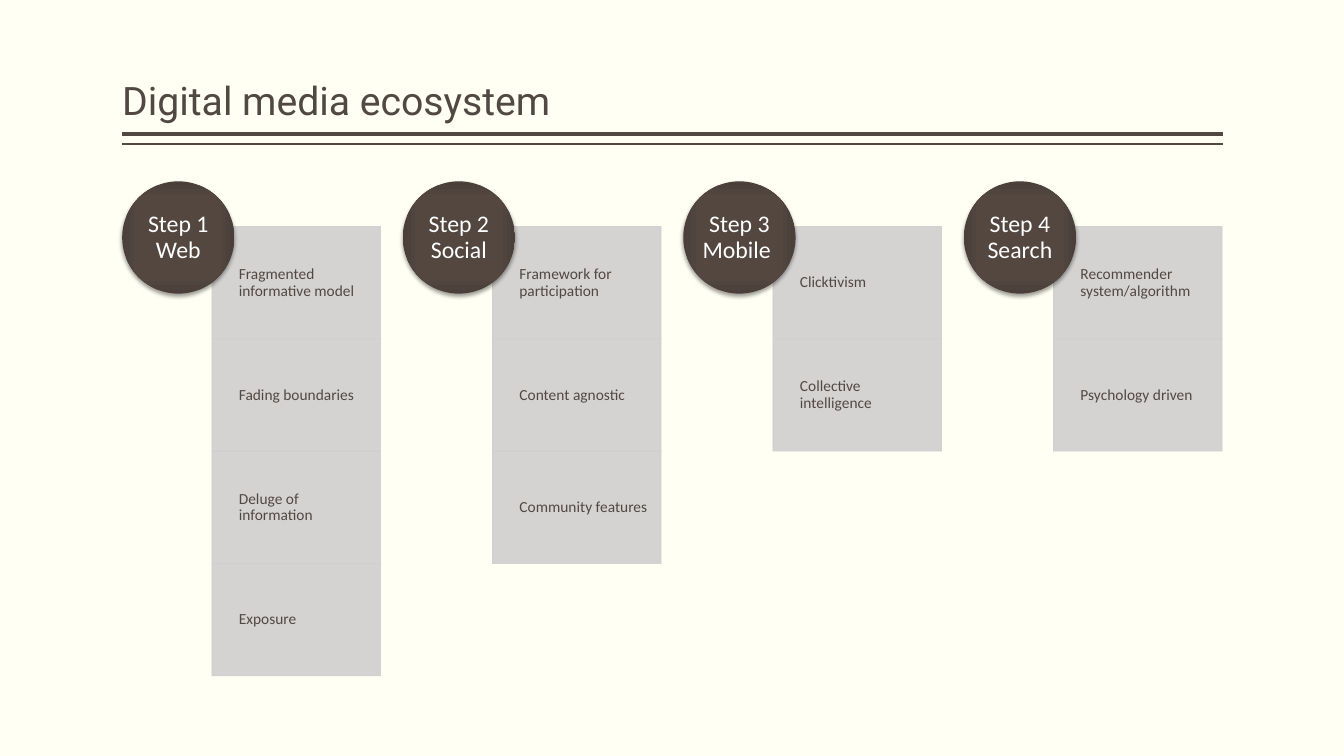
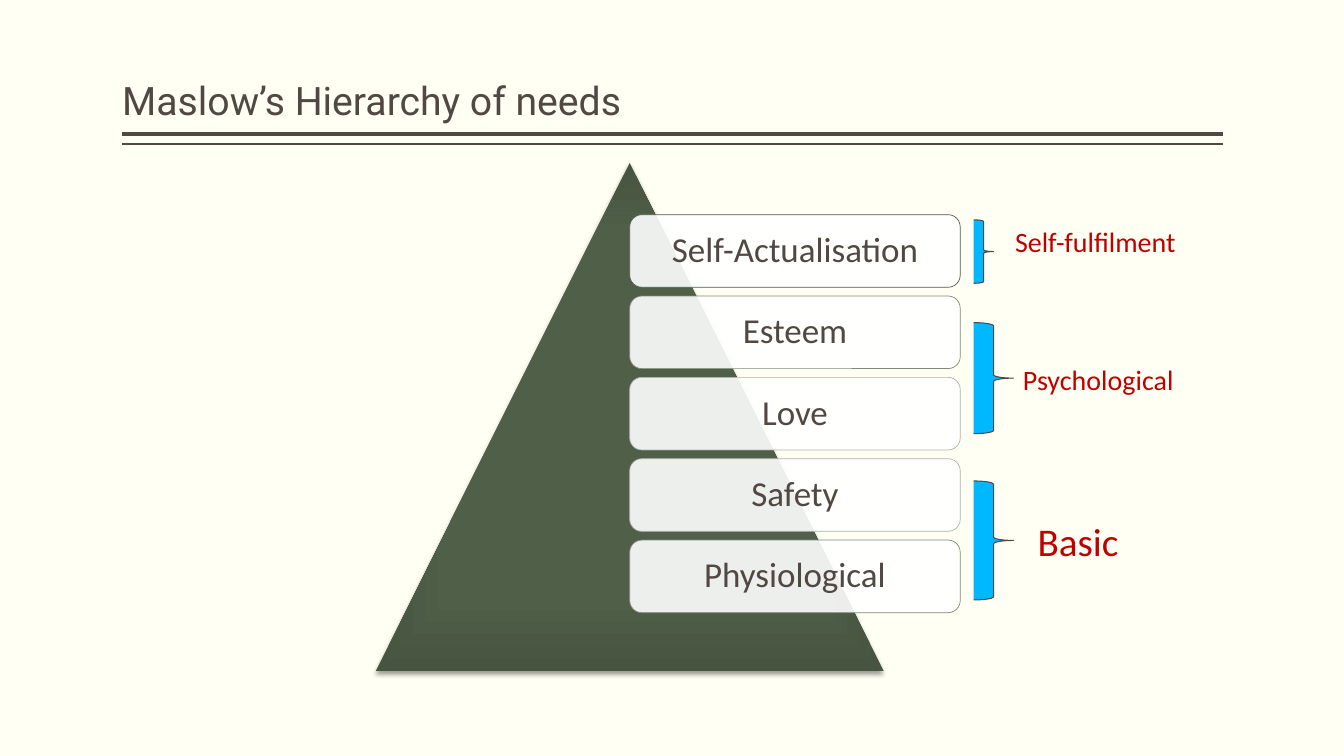
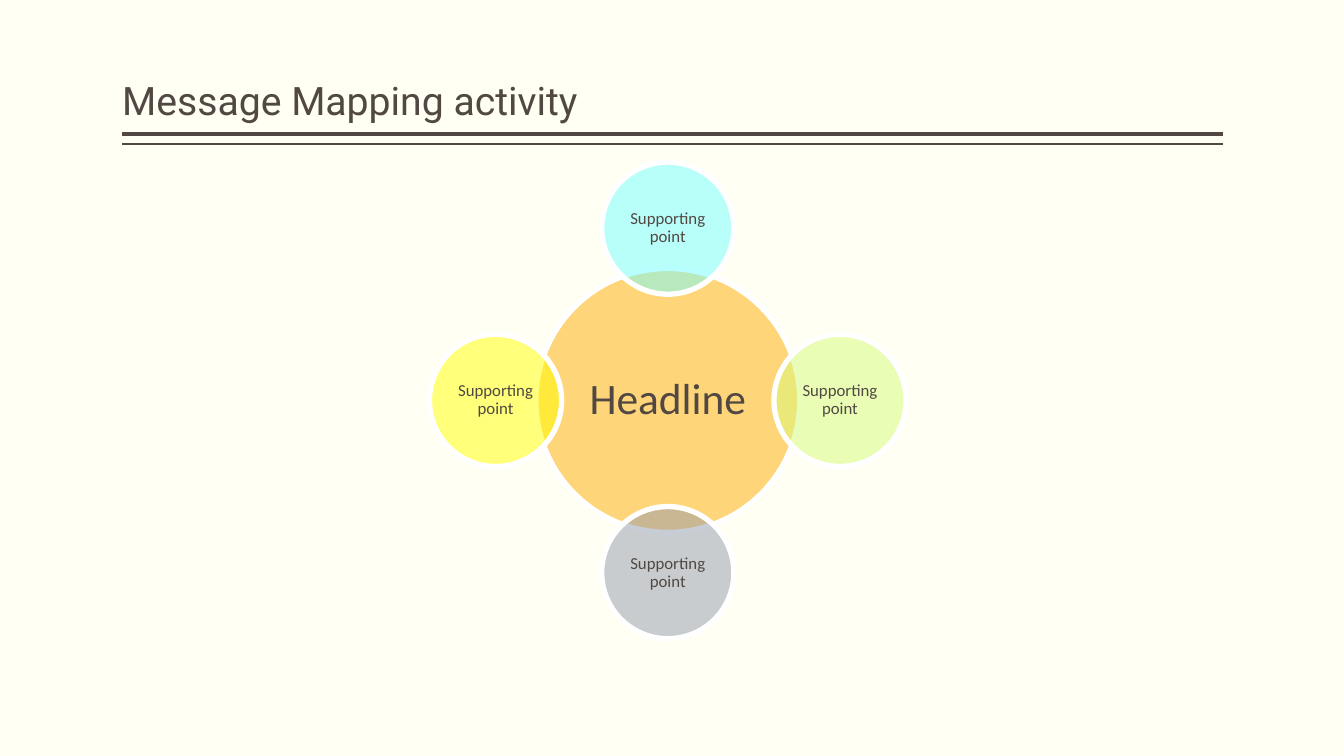
from lxml import etree
from pptx import Presentation
from pptx.dml.color import RGBColor
from pptx.enum.shapes import MSO_CONNECTOR, MSO_SHAPE
from pptx.enum.text import MSO_ANCHOR, MSO_AUTO_SIZE, PP_ALIGN
from pptx.oxml import parse_xml
from pptx.oxml.ns import nsdecls, qn
from pptx.util import Cm, Pt

STRAIGHT = MSO_CONNECTOR.STRAIGHT
RECTANGLE, ROUNDED = MSO_SHAPE.RECTANGLE, MSO_SHAPE.ROUNDED_RECTANGLE
OVAL, TRIANGLE = MSO_SHAPE.OVAL, MSO_SHAPE.ISOSCELES_TRIANGLE
BRACE = MSO_SHAPE.RIGHT_BRACE
MIDDLE, BOTTOM = MSO_ANCHOR.MIDDLE, MSO_ANCHOR.BOTTOM
LEFT, CENTER = PP_ALIGN.LEFT, PP_ALIGN.CENTER
FIXED = MSO_AUTO_SIZE.NONE

IVORY = RGBColor(0xFF, 0xFF, 0xF3)
WHITE = RGBColor(0xFF, 0xFF, 0xFF)
INK = RGBColor(0x51, 0x48, 0x43)
GREY = RGBColor(0xD0, 0xCF, 0xCF)
RED = RGBColor(0xC0, 0x00, 0x00)
BLUE = RGBColor(0x00, 0xB8, 0xFF)
DARK_GREEN = RGBColor(0x51, 0x5C, 0x4B)
MID_GREEN = RGBColor(0x7D, 0x8B, 0x77)
PALE_GREEN = RGBColor(0xAC, 0xB3, 0xAA)
ORANGE = RGBColor(0xFF, 0xD5, 0x79)
CYAN = RGBColor(0x73, 0xFE, 0xFF)
LIME = RGBColor(0xD5, 0xFC, 0x79)
SLATE = RGBColor(0x92, 0x9A, 0xAB)
YELLOW = RGBColor(0xFF, 0xFF, 0x00)
BROWN_SHADES = [RGBColor(0x54, 0x47, 0x40), RGBColor(0x53, 0x47, 0x40), RGBColor(0x4A, 0x3F, 0x39)]
GREEN_SHADES = [RGBColor(0x4F, 0x60, 0x48), RGBColor(0x4F, 0x5F, 0x48), RGBColor(0x46, 0x54, 0x40)]

MARGIN, CONTENT_WIDTH = 3.08, 27.73


def set_alpha(parent, percent):
    """Make every colour inside the element partly transparent."""
    for color in parent.iter(qn("a:srgbClr")):
        etree.SubElement(color, qn("a:alpha"), val=str(percent * 1000))


class Deck:
    """Holds the shared style and the page being drawn."""

    def __init__(self):
        """Set the page size, the background and the title area."""
        self.deck = Presentation()
        self.deck.slide_width, self.deck.slide_height = Cm(33.87), Cm(19.05)
        fill = self.deck.slide_master.background.fill
        fill.solid()
        fill.fore_color.rgb = IVORY
        self.layout = self.deck.slide_layouts[5]
        title, *others = self.layout.placeholders
        title.left, title.top = Cm(MARGIN), Cm(0.2)
        title.width, title.height = Cm(CONTENT_WIDTH), Cm(3.05)
        for holder in others:
            holder.element.getparent().remove(holder.element)
        self.page = None

    def add_page(self, title):
        """Start a page with its title."""
        self.page = self.deck.slides.add_slide(self.layout)
        if len(self.deck.slides) == 1:
            self.add_layout_rules()
        frame = self.page.shapes.title.text_frame
        self.set_text(frame, title, 28, INK, LEFT, (0, 0.13, 0, 0.13), "Roboto")
        frame.vertical_anchor = BOTTOM

    def add_layout_rules(self):
        """Draw the double rule and hand it to the layout."""
        rules = [self.add_rule(3.38, 3), self.add_rule(3.63, 1)]
        for rule in rules:
            self.layout.shapes.element.append(rule.element)

    def add_rule(self, top, weight):
        """Draw a rule across the content width."""
        rule = self.page.shapes.add_connector(
            STRAIGHT, Cm(MARGIN + CONTENT_WIDTH), Cm(top), Cm(MARGIN), Cm(top))
        rule.line.color.rgb, rule.line.width = INK, Pt(weight)
        etree.SubElement(rule.element.spPr, qn("a:effectLst"))
        return rule

    def set_text(self, frame, text, size, color, align, insets, font="Calibri", spacing=0.9):
        """Put one formatted paragraph into a text frame."""
        frame.word_wrap, frame.auto_size = True, FIXED
        (frame.margin_left, frame.margin_top,
         frame.margin_right, frame.margin_bottom) = map(Cm, insets)
        para = frame.paragraphs[0]
        para.text, para.alignment, para.line_spacing = text, align, spacing
        para.font.name, para.font.size, para.font.color.rgb = font, Pt(size), color

    def add_shape(self, kind, left, top, width, height):
        """Add a preset shape without line or shadow."""
        shape = self.page.shapes.add_shape(kind, Cm(left), Cm(top), Cm(width), Cm(height))
        shape.shadow.inherit = False
        shape.line.fill.background()
        return shape

    def add_flat(self, kind, box, fill, line, weight, alpha=100, line_alpha=100):
        """Add a shape with a plain fill and outline."""
        shape = self.add_shape(kind, *box)
        shape.fill.solid()
        shape.fill.fore_color.rgb = fill
        if alpha < 100:
            set_alpha(shape.element.spPr.find(qn("a:solidFill")), alpha)
        shape.line.color.rgb, shape.line.width = line, Pt(weight)
        if line_alpha < 100:
            set_alpha(shape.element.spPr.find(qn("a:ln")), line_alpha)
        return shape

    def add_shaded(self, kind, box, shades):
        """Add a shape with a gradient towards its edge and a soft shadow."""
        shape = self.add_shape(kind, *box)
        shape.fill.solid()
        properties = shape.element.spPr
        stops = "".join(f'<a:gs pos="{position}"><a:srgbClr val="{shade}"/></a:gs>'
                        for position, shade in zip((0, 71000, 100000), shades))
        gradient = parse_xml(
            f'<a:gradFill {nsdecls("a")} rotWithShape="1"><a:gsLst>{stops}</a:gsLst>'
            '<a:path path="rect"><a:fillToRect l="50000" t="50000" r="50000" b="50000"/>'
            '</a:path></a:gradFill>')
        properties.replace(properties.find(qn("a:solidFill")), gradient)
        shadow = etree.SubElement(
            properties.find(qn("a:effectLst")), qn("a:outerShdw"), blurRad=str(Pt(3.1)),
            dist=str(Pt(2)), dir="5400000", algn="ctr", rotWithShape="0")
        etree.SubElement(shadow, qn("a:srgbClr"), val="000000")
        set_alpha(shadow, 38)
        return shape

    def fill_text(self, shape, text, size, color=INK, align=CENTER, insets=(0, 0, 0, 0)):
        """Put vertically centred text inside a shape."""
        self.set_text(shape.text_frame, text, size, color, align, insets)
        shape.text_frame.vertical_anchor = MIDDLE

    def add_label(self, text, left, top, width, height, size):
        """Add a red free-standing label."""
        box = self.page.shapes.add_textbox(Cm(left), Cm(top), Cm(width), Cm(height))
        self.set_text(box.text_frame, text, size, RED, LEFT, (0.25, 0.13, 0.25, 0.13), spacing=1.0)

    def add_step(self, left, heading, points):
        """Add a column of points under a round step heading."""
        side = 2.83
        for row, point in enumerate(points):
            card = self.add_flat(RECTANGLE, (left + 2.26, 5.71 + row * side, 4.25, side),
                                 GREY, GREY, 0.5, 90, 90)
            self.fill_text(card, point, 11, align=LEFT, insets=(0.68, 0.23, 0.23, 0.23))
        badge = self.add_shaded(OVAL, (left, 4.57, side, side), BROWN_SHADES)
        self.fill_text(badge, heading, 17, WHITE)

    def add_circle(self, text, center_x, center_y, size, fill, alpha, font_size, inset):
        """Add a white-rimmed circle around a centre point."""
        box = (center_x - size / 2, center_y - size / 2, size, size)
        circle = self.add_flat(OVAL, box, fill, WHITE, 3.78, alpha)
        self.fill_text(circle, text, font_size, insets=(inset,) * 4)


def draw_ecosystem(deck):
    """Draw the four steps of the media ecosystem."""
    deck.add_page("Digital media ecosystem")
    steps = [
        ("Step 1 Web", ["Fragmented informative model", "Fading boundaries",
                        "Deluge of information", "Exposure"]),
        ("Step 2 Social", ["Framework for participation", "Content agnostic",
                           "Community features"]),
        ("Step 3 Mobile ", ["Clicktivism", "Collective intelligence"]),
        ("Step 4 Search", ["Recommender system/algorithm", "Psychology driven"]),
    ]
    for column, (heading, points) in enumerate(steps):
        deck.add_step(MARGIN + column * 7.07, heading, points)


def draw_hierarchy(deck):
    """Draw the pyramid of needs with its three groups."""
    deck.add_page("Maslow’s Hierarchy of needs")
    deck.add_shaded(TRIANGLE, (9.47, 4.11, 12.8, 12.8), GREEN_SHADES)
    needs = [("Self-Actualisation", DARK_GREEN), ("Esteem", MID_GREEN), ("Love", PALE_GREEN),
             ("Safety", PALE_GREEN), ("Physiological", MID_GREEN)]
    for row, (need, outline) in enumerate(needs):
        bar = deck.add_flat(ROUNDED, (15.87, 5.41 + row * 2.05, 8.33, 1.83),
                            WHITE, outline, 0.5, 90)
        deck.fill_text(bar, need, 25, insets=(0.25,) * 4)
    for top, width, height in [(12.12, 1, 3), (8.13, 1, 2.8), (5.54, 0.5, 1.6)]:
        deck.add_flat(BRACE, (24.54, top, width, height), BLUE, INK, 0.75)
    deck.add_label("Basic", 25.9, 12.9, 3.81, 1.45, 28)
    deck.add_label("Psychological", 25.53, 9, 4.95, 1.11, 20)
    deck.add_label("Self-fulfilment", 25.33, 5.53, 4.6, 1.95, 20)


def draw_message_map(deck):
    """Draw the headline with four supporting points around it."""
    deck.add_page("Message Mapping activity")
    center_x, center_y, orbit = 16.83, 10.09, 4.34
    deck.add_circle("Headline", center_x, center_y, 6.65, ORANGE, 100, 31, 0.1)
    for across, down, color in [(0, -1, CYAN), (1, 0, LIME), (0, 1, SLATE), (-1, 0, YELLOW)]:
        deck.add_circle("Supporting point", center_x + across * orbit,
                        center_y + down * orbit, 3.33, color, 50, 12, 0.05)


def main():
    """Build and save the presentation."""
    deck = Deck()
    draw_ecosystem(deck)
    draw_hierarchy(deck)
    draw_message_map(deck)
    deck.deck.save("out.pptx")


if __name__ == "__main__":
    main()
